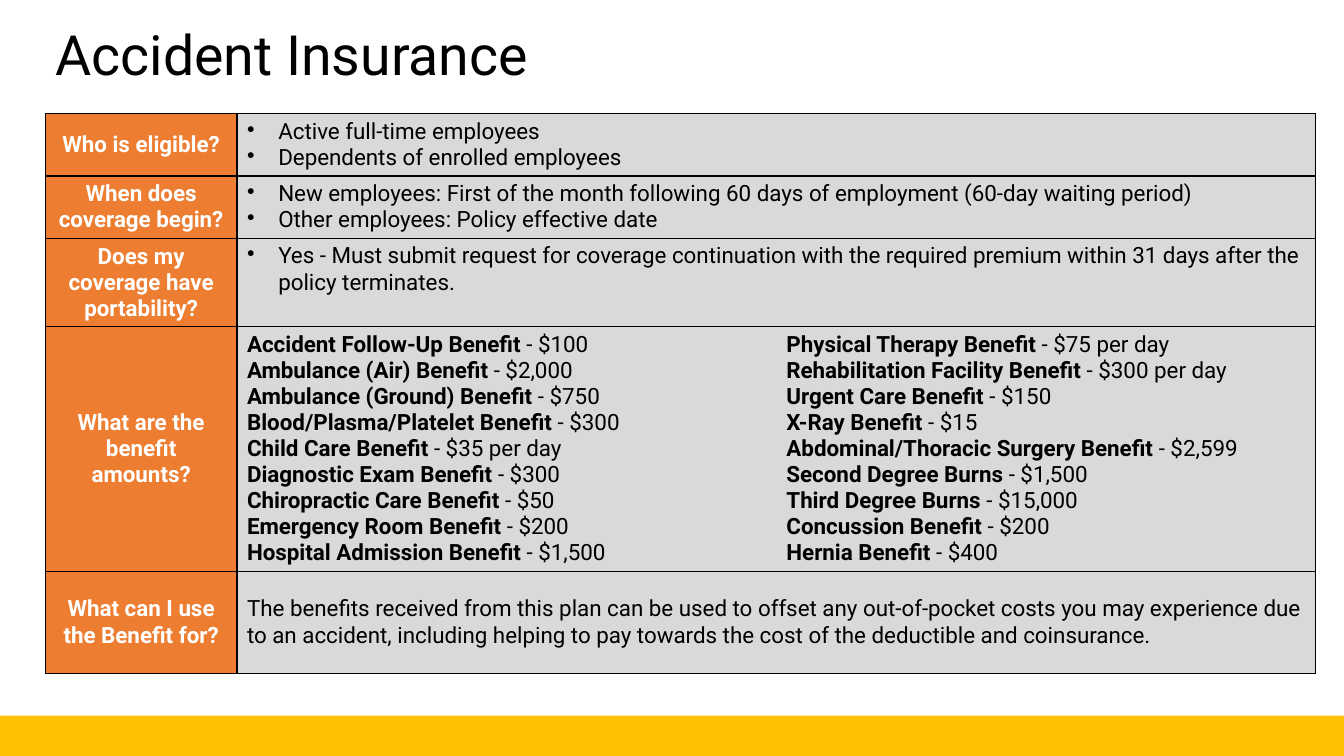
"""Build the Accident Insurance benefit summary slide."""
import dataclasses

import pptx
import pptx.dml.color
import pptx.enum.shapes
import pptx.enum.text
import pptx.oxml
import pptx.oxml.ns
import pptx.util

TITLE = "Accident Insurance"
BENEFITS = [
    [
        ("Accident Follow-Up Benefit", "$100"),
        ("Ambulance (Air) Benefit", "$2,000"),
        ("Ambulance (Ground) Benefit", "$750"),
        ("Blood/Plasma/Platelet Benefit", "$300"),
        ("Child Care Benefit", "$35 per day"),
        ("Diagnostic Exam Benefit", "$300"),
        ("Chiropractic Care Benefit", "$50"),
        ("Emergency Room Benefit", "$200"),
        ("Hospital Admission Benefit", "$1,500"),
    ],
    [
        ("Physical Therapy Benefit", "$75 per day"),
        ("Rehabilitation Facility Benefit", "$300 per day"),
        ("Urgent Care Benefit", "$150"),
        ("X-Ray Benefit", "$15"),
        ("Abdominal/Thoracic Surgery Benefit", "$2,599"),
        ("Second Degree Burns", "$1,500"),
        ("Third Degree Burns", "$15,000"),
        ("Concussion Benefit", "$200"),
        ("Hernia Benefit", "$400"),
    ],
]
QUESTIONS = [
    ("Who is eligible?", 0.61, "bullets",
     ["Active full-time employees", "Dependents of enrolled employees"]),
    ("When does coverage begin?", 0.61, "bullets",
     ["New employees: First of the month following 60 days of employment (60-day waiting period)",
      "Other employees: Policy effective date"]),
    ("Does my coverage have portability?", 0.87, "bullets",
     ["Yes - Must submit request for coverage continuation with the required premium "
      "within 31 days after the policy terminates."]),
    ("What are the benefit amounts?", 2.43, "benefits", BENEFITS),
    ("What can I use the Benefit for?", 1.01, "plain",
     ["The benefits received from this plan can be used to offset any out-of-pocket costs "
      "you may experience due to an accident, including helping to pay towards the cost "
      "of the deductible and coinsurance."]),
]
WIDTH, HEIGHT = 13.33, 7.5
LEFT, TABLE_TOP = 0.45, 1.13
COLUMNS = [1.9, 5.35, 5.35]
BAR_HEIGHT = 0.4
BULLET_INDENT = 0.31


@dataclasses.dataclass(frozen=True)
class Theme:
    font: str = "Roboto"
    title_size: float = 39.6
    body_size: float = 16
    ink: str = "000000"
    light: str = "FFFFFF"
    question: str = "ED7D31"
    answer: str = "D9D9D9"
    bar: str = "FFC000"
    border: float = 1


THEME = Theme()
inch = pptx.util.Inches
ALIGN = pptx.enum.text.PP_ALIGN
ANCHOR = pptx.enum.text.MSO_ANCHOR


def paint(fill, color):
    fill.solid()
    fill.fore_color.rgb = pptx.dml.color.RGBColor.from_string(color)


def write(frame, paragraphs, size=THEME.body_size, color=THEME.ink, bold=False,
          align=ALIGN.LEFT, spacing=1.0, bullet=False):
    """Fill a frame; a pair is a bold name followed by a regular amount."""
    for index, content in enumerate(paragraphs):
        para = frame.paragraphs[0] if index == 0 else frame.add_paragraph()
        para.alignment, para.line_spacing = align, spacing
        if isinstance(content, tuple):
            name, amount = content
            pieces = [(name, True), (f" - {amount}", False)]
        else:
            pieces = [(content, bold)]
        for text, weight in pieces:
            span = para.add_run()
            span.text = text
            span.font.name, span.font.size = THEME.font, pptx.util.Pt(size)
            span.font.bold = weight
            span.font.color.rgb = pptx.dml.color.RGBColor.from_string(color)
        if bullet:
            props = para._p.get_or_add_pPr()
            props.set("marL", str(inch(BULLET_INDENT)))
            props.set("indent", str(-inch(BULLET_INDENT)))
            props.append(pptx.oxml.parse_xml(
                f'<a:buChar {pptx.oxml.ns.nsdecls("a")} char="•"/>'))


def style_cell(cell, color, open_side=None):
    props = cell._tc.get_or_add_tcPr()
    for side in "LRTB":
        paint_xml = ("<a:noFill/>" if side == open_side else
                     f'<a:solidFill><a:srgbClr val="{THEME.ink}"/></a:solidFill>')
        props.append(pptx.oxml.parse_xml(
            f'<a:ln{side} {pptx.oxml.ns.nsdecls("a")} '
            f'w="{pptx.util.Pt(THEME.border)}">{paint_xml}</a:ln{side}>'))
    paint(cell.fill, color)


def add_title(page):
    title = page.shapes.title
    title.left, title.top, title.width, title.height = map(inch, (LEFT, 0.26, 11.5, 0.63))
    frame = title.text_frame
    frame.auto_size = pptx.enum.text.MSO_AUTO_SIZE.NONE
    frame.vertical_anchor = ANCHOR.MIDDLE
    write(frame, [TITLE], size=THEME.title_size, spacing=0.9)


def add_questions(page):
    heights = [height for _, height, _, _ in QUESTIONS]
    table = page.shapes.add_table(
        len(QUESTIONS), len(COLUMNS), inch(LEFT), inch(TABLE_TOP),
        inch(sum(COLUMNS)), inch(sum(heights))).table
    table.first_row = table.horz_banding = False
    for column, width in zip(table.columns, COLUMNS):
        column.width = inch(width)
    for index, (question, height, kind, answer) in enumerate(QUESTIONS):
        table.rows[index].height = inch(height)
        head, first, second = (table.cell(index, column) for column in range(3))
        split = kind == "benefits"
        style_cell(head, THEME.question)
        style_cell(first, THEME.answer, open_side="R" if split else None)
        style_cell(second, THEME.answer, open_side="L" if split else None)
        head.vertical_anchor = ANCHOR.MIDDLE
        write(head.text_frame, [question], color=THEME.light, bold=True, align=ALIGN.CENTER)
        if split:
            for cell, benefits in zip((first, second), answer):
                write(cell.text_frame, benefits)
        else:
            first.merge(second)
            first.vertical_anchor = ANCHOR.MIDDLE if kind == "plain" else ANCHOR.TOP
            write(first.text_frame, answer, bullet=kind == "bullets")


def add_bar(page):
    bar = page.shapes.add_shape(
        pptx.enum.shapes.MSO_SHAPE.RECTANGLE, 0, inch(HEIGHT - BAR_HEIGHT),
        inch(WIDTH), inch(BAR_HEIGHT))
    bar.shadow.inherit = False
    paint(bar.fill, THEME.bar)
    bar.line.fill.background()


def main():
    deck = pptx.Presentation()
    deck.slide_width, deck.slide_height = inch(WIDTH), inch(HEIGHT)
    page = deck.slides.add_slide(deck.slide_layouts[5])
    add_title(page)
    add_questions(page)
    add_bar(page)
    deck.save("out.pptx")


if __name__ == "__main__":
    main()
